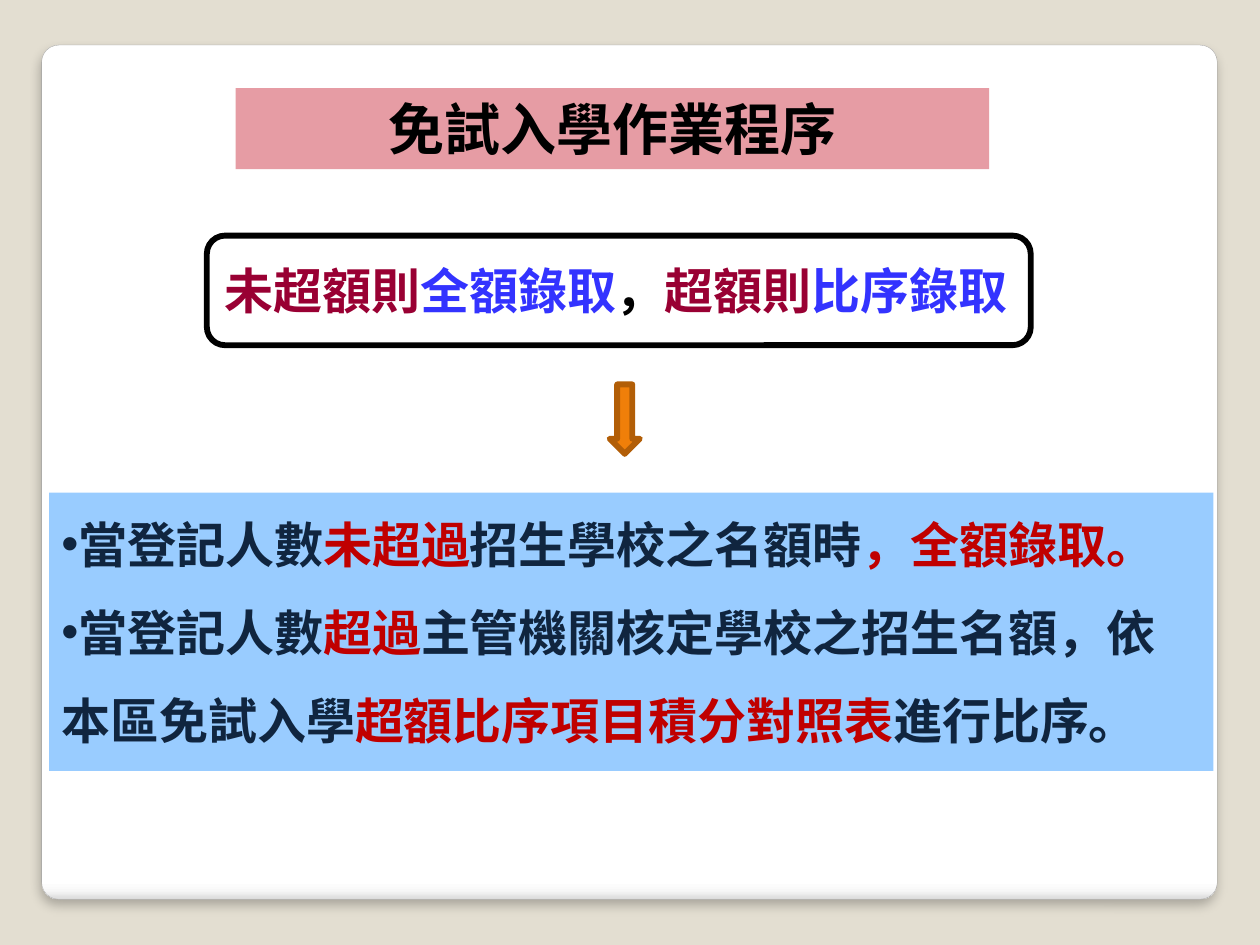
import dataclasses

import lxml.etree
import pptx
import pptx.dml.color
import pptx.enum.shapes
import pptx.enum.text
import pptx.oxml
import pptx.oxml.ns
import pptx.util

Cm, Pt = pptx.util.Cm, pptx.util.Pt
SHAPES = pptx.enum.shapes.MSO_SHAPE
ANCHOR = pptx.enum.text.MSO_ANCHOR
ALIGN = pptx.enum.text.PP_ALIGN
qn = pptx.oxml.ns.qn


@dataclasses.dataclass(frozen=True)
class Theme:
    font: str = "Noto Sans CJK SC"
    title_size: int = 32
    body_size: int = 28
    outline: float = 3.35
    hairline: float = 0.16
    backdrop: str = "E3DED1"
    white: str = "FFFFFF"
    black: str = "000000"
    card_edge: str = "A4A4A4"
    title_fill: str = "E69CA4"
    rules_fill: str = "99CCFF"
    arrow: str = "F07F09"
    arrow_edge: str = "B25E07"
    condition: str = "990033"
    outcome: str = "3333FF"
    ink: str = "10253F"
    accent: str = "C00000"


THEME = Theme()
CARD_STOPS = [(0, "FFFFFF"), (98, "FFFFFF"), (99, "F7F7F7"), (100, "DADADA")]

TITLE = [("免試入學作業程序", THEME.black)]
PRINCIPLE = [
    ("未超額則", THEME.condition),
    ("全額錄取", THEME.outcome),
    ("，", THEME.black),
    ("超額則", THEME.condition),
    ("比序錄取", THEME.outcome),
]
RULES = [
    [
        ("當登記人數", THEME.ink),
        ("未超過", THEME.accent),
        ("招生學校之名額時", THEME.ink),
        ("，全額錄取。", THEME.accent),
    ],
    [
        ("當登記人數", THEME.ink),
        ("超過", THEME.accent),
        ("主管機關核定學校之招生名額，依本區免試入學", THEME.ink),
        ("超額比序項目積分對照表", THEME.accent),
        ("進行比序。", THEME.ink),
    ],
]


def rgb(color):
    return pptx.dml.color.RGBColor.from_string(color)


def add_block(slide, preset, box, fill, edge=None, width=THEME.outline):
    block = slide.shapes.add_shape(preset, *map(Cm, box))
    block.shadow.inherit = False
    block.fill.solid()
    block.fill.fore_color.rgb = rgb(fill)
    if edge:
        block.line.color.rgb = rgb(edge)
        block.line.width = Pt(width)
    else:
        block.line.fill.background()
    return block


def write(paragraph, pieces, size, align=ALIGN.LEFT):
    paragraph.alignment = align
    for words, color in pieces:
        run = paragraph.add_run()
        run.text = words
        run.font.name = THEME.font
        run.font.size = Pt(size)
        run.font.bold = True
        run.font.color.rgb = rgb(color)
        east_asian = lxml.etree.SubElement(run.font._element, qn("a:ea"))
        east_asian.set("typeface", THEME.font)


def shade_card(card):
    card.fill.gradient()
    card.fill.gradient_angle = 270
    stops = card._element.spPr.find(qn("a:gradFill")).find(qn("a:gsLst"))
    for stop in list(stops):
        stops.remove(stop)
    for percent, color in CARD_STOPS:
        stop = lxml.etree.SubElement(stops, qn("a:gs"), pos=str(percent * 1000))
        lxml.etree.SubElement(stop, qn("a:srgbClr"), val=color)
    shadow = lxml.etree.SubElement(
        card._element.spPr.find(qn("a:effectLst")), qn("a:outerShdw"),
        blurRad=str(Pt(6)), dist=str(Pt(4)), dir="5400000", rotWithShape="0")
    tint = lxml.etree.SubElement(shadow, qn("a:srgbClr"), val=THEME.black)
    lxml.etree.SubElement(tint, qn("a:alpha"), val="25000")


def add_bullet(paragraph):
    properties = paragraph._p.get_or_add_pPr()
    lxml.etree.SubElement(properties, qn("a:buFont"), typeface="Arial")
    lxml.etree.SubElement(properties, qn("a:buChar"), char="•")


def main():
    """Build the admission procedure slide."""
    deck = pptx.Presentation()
    deck.slide_width, deck.slide_height = Cm(25.4), Cm(19.05)
    slide = deck.slides.add_slide(deck.slide_layouts[6])
    slide.background.fill.solid()
    slide.background.fill.fore_color.rgb = rgb(THEME.backdrop)

    card = add_block(slide, SHAPES.ROUNDED_RECTANGLE, (0.84, 0.91, 23.7, 17.22),
                     THEME.white, THEME.card_edge, THEME.hairline)
    card.adjustments[0] = 0.02
    shade_card(card)

    principle = add_block(slide, SHAPES.ROUNDED_RECTANGLE, (4.17, 4.75, 16.61, 2.21),
                          THEME.white, THEME.black)
    principle.text_frame.word_wrap = False
    principle.text_frame.vertical_anchor = ANCHOR.MIDDLE
    lead = principle.text_frame.paragraphs[0]
    write(lead, PRINCIPLE, THEME.body_size)
    before = lxml.etree.SubElement(lead._p.get_or_add_pPr(), qn("a:spcBef"))
    lxml.etree.SubElement(before, qn("a:spcPct"), val="10000")

    rules = add_block(slide, SHAPES.RECTANGLE, (0.99, 9.93, 23.47, 5.61), THEME.rules_fill)
    rules.text_frame.word_wrap = True
    rules.text_frame.vertical_anchor = ANCHOR.MIDDLE
    first = rules.text_frame.paragraphs[0]
    second = rules.text_frame.add_paragraph()
    second.line_spacing = 1.5
    for paragraph, rule in zip((first, second), RULES):
        write(paragraph, rule, THEME.body_size)
        add_bullet(paragraph)

    title = add_block(slide, SHAPES.RECTANGLE, (4.75, 1.78, 15.19, 1.63), THEME.title_fill)
    title.text_frame.word_wrap = True
    title.text_frame.vertical_anchor = ANCHOR.TOP
    title.text_frame.auto_size = pptx.enum.text.MSO_AUTO_SIZE.SHAPE_TO_FIT_TEXT
    write(title.text_frame.paragraphs[0], TITLE, THEME.title_size, ALIGN.CENTER)

    add_block(slide, SHAPES.DOWN_ARROW, (12.29, 7.75, 0.61, 1.4),
              THEME.arrow, THEME.arrow_edge)
    deck.save("out.pptx")


if __name__ == "__main__":
    main()
